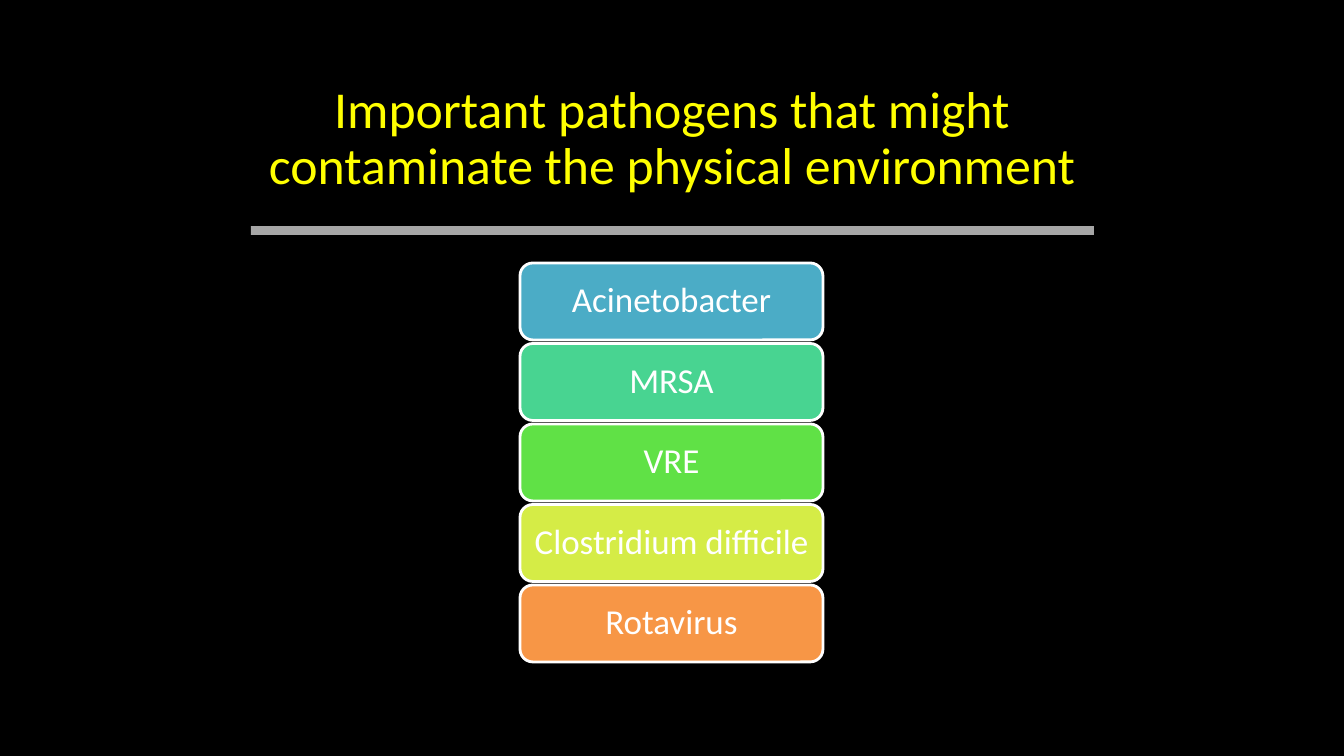
from lxml import etree
from pptx import Presentation
from pptx.dml.color import RGBColor
from pptx.enum.shapes import MSO_SHAPE
from pptx.enum.text import MSO_ANCHOR, MSO_AUTO_SIZE, PP_ALIGN
from pptx.oxml.ns import qn
from pptx.util import Pt

EMU_PER_PX = 914400 / 100.8
RECTANGLE = MSO_SHAPE.RECTANGLE
ROUNDED = MSO_SHAPE.ROUNDED_RECTANGLE
MIDDLE = MSO_ANCHOR.MIDDLE
CENTER = PP_ALIGN.CENTER
NO_AUTOFIT = MSO_AUTO_SIZE.NONE

FONT = "Calibri"
BLACK = RGBColor(0x00, 0x00, 0x00)
WHITE = RGBColor(0xFF, 0xFF, 0xFF)
YELLOW = RGBColor(0xFF, 0xFF, 0x00)
BLUE = RGBColor(0x4B, 0xAC, 0xC6)
TEAL = RGBColor(0x48, 0xD4, 0x91)
GREEN = RGBColor(0x60, 0xE1, 0x46)
LIME = RGBColor(0xD5, 0xEC, 0x46)
ORANGE = RGBColor(0xF7, 0x96, 0x46)

TITLE = "Important pathogens that might contaminate the physical environment"
PATHOGENS = [
    ("Acinetobacter", BLUE),
    ("MRSA", TEAL),
    ("VRE", GREEN),
    ("Clostridium difficile", LIME),
    ("Rotavirus", ORANGE),
]
FIRST_TOP, LAST_TOP = 263, 585


def px(value):
    return round(value * EMU_PER_PX)


def write_text(shape, text, *, size, color, inset_x=10, inset_y=5):
    frame = shape.text_frame
    frame.word_wrap = True
    frame.auto_size = NO_AUTOFIT
    frame.vertical_anchor = MIDDLE
    frame.margin_left = frame.margin_right = px(inset_x)
    frame.margin_top = frame.margin_bottom = px(inset_y)
    paragraph = frame.paragraphs[0]
    paragraph.alignment = CENTER
    paragraph.line_spacing = 0.9
    run = paragraph.add_run()
    run.text = text
    run.font.name = FONT
    run.font.size = Pt(size)
    run.font.color.rgb = color


def add_box(slide, kind, left, top, width, height, fill, *, line=None, opacity=100):
    shape = slide.shapes.add_shape(kind, px(left), px(top), px(width), px(height))
    shape.shadow.inherit = False
    shape.fill.solid()
    shape.fill.fore_color.rgb = fill
    if opacity < 100:
        color = shape.fill._xPr.find(".//" + qn("a:srgbClr"))
        etree.SubElement(color, qn("a:alpha"), val=str(opacity * 1000))
    if line is None:
        shape.line.fill.background()
    else:
        shape.line.color.rgb = line
        shape.line.width = Pt(2)
    return shape


def add_title(slide):
    title = slide.shapes.title
    title.left, title.top = px(240), px(67)
    title.width, title.height = px(864), px(146)
    write_text(title, TITLE, size=37, color=YELLOW)


def add_pathogens(slide):
    step = (LAST_TOP - FIRST_TOP) / (len(PATHOGENS) - 1)
    for index, (name, fill) in enumerate(PATHOGENS):
        top = FIRST_TOP + index * step
        box = add_box(slide, ROUNDED, 520, top, 303, 77, fill, line=WHITE)
        write_text(box, name, size=25, color=WHITE, inset_x=5)


def main():
    presentation = Presentation()
    presentation.slide_width, presentation.slide_height = px(1344), px(756)
    slide = presentation.slides.add_slide(presentation.slide_layouts[5])
    slide.background.fill.solid()
    slide.background.fill.fore_color.rgb = BLACK

    # Heading and the translucent rule under it
    add_title(slide)
    add_box(slide, RECTANGLE, 251, 226, 843, 9, WHITE, opacity=65)

    # Stack of pathogen names
    add_pathogens(slide)

    presentation.save("out.pptx")


if __name__ == "__main__":
    main()
